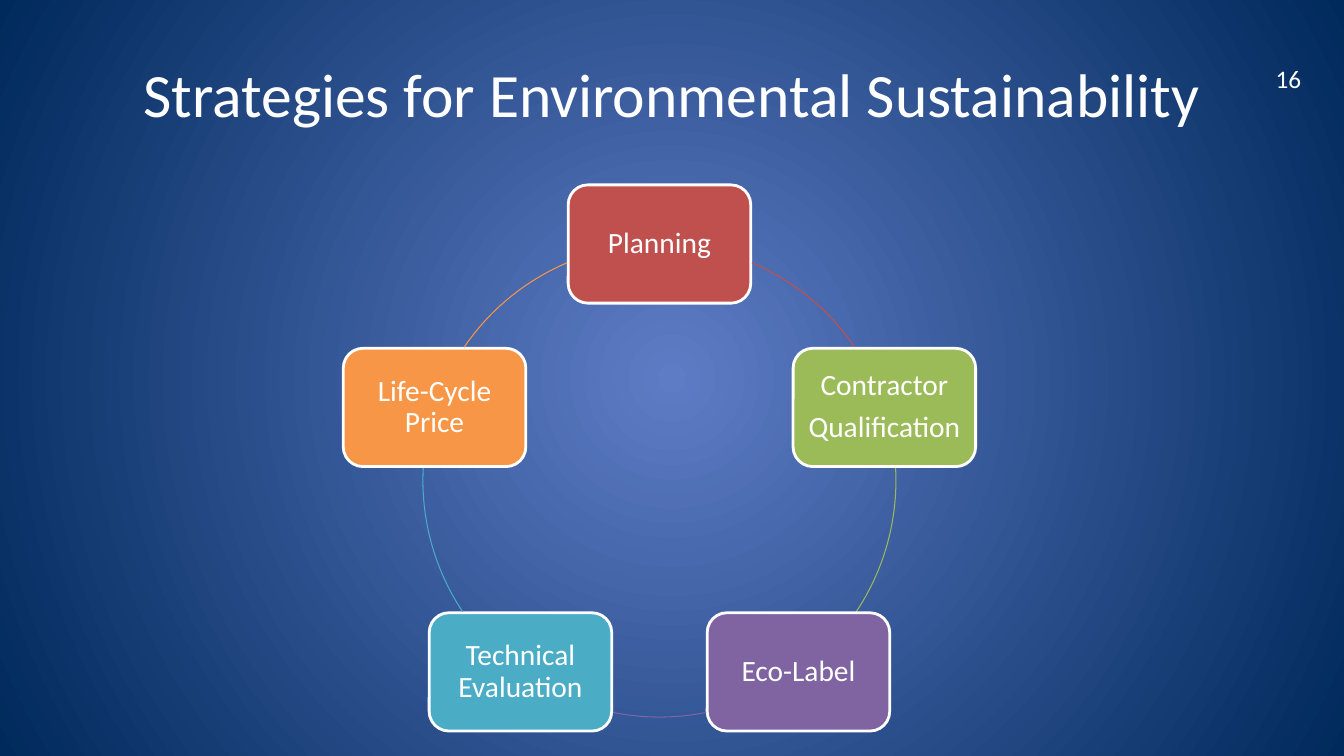
from math import cos, radians, sin

from lxml.etree import SubElement
from pptx import Presentation
from pptx.dml.color import RGBColor as RGB
from pptx.enum.shapes import MSO_SHAPE as Shape
from pptx.enum.text import MSO_ANCHOR as Anchor, PP_ALIGN as Align
from pptx.oxml.ns import qn
from pptx.util import Cm, Pt

WHITE = RGB(0xFF, 0xFF, 0xFF)
GLOW = RGB(0x5E, 0x7C, 0xC5)
NAVY = RGB(0x00, 0x29, 0x5C)
RED = RGB(0xC0, 0x50, 0x4D)
GREEN = RGB(0x9B, 0xBB, 0x59)
PURPLE = RGB(0x80, 0x64, 0xA2)
TEAL = RGB(0x4B, 0xAC, 0xC6)
ORANGE = RGB(0xF7, 0x96, 0x46)

# Ring centre and radius, card size, in cm
MID_X, MID_Y, RADIUS = 16.62, 12.11, 5.96
CARD_W, CARD_H = 4.6, 2.98

# Card text, colour, and the visible arc to the next card in degrees
STEPS = [
    ("Planning", RED, (293, 325.7)),
    ("Contractor\nQualification", GREEN, (357, 33.7)),
    ("Eco-Label", PURPLE, (78.6, 101.4)),
    ("Technical Evaluation", TEAL, (146.3, 183)),
    ("Life-Cycle Price", ORANGE, (214.3, 247)),
]


def paint_back(slide):
    """Radial gradient, light in the middle."""
    fill = slide.background.fill
    fill.gradient()
    for stop, color, pos in zip(fill.gradient_stops, (GLOW, NAVY), (0, 1)):
        stop.color.rgb = color
        stop.position = pos
    grad = slide.element.find(".//" + qn("a:gradFill"))
    grad.remove(grad.find(qn("a:lin")))
    circle = SubElement(grad, qn("a:path"), path="circle")
    SubElement(circle, qn("a:fillToRect"),
               {side: "50000" for side in "ltrb"})


def set_text(frame, text, size, align):
    frame.text = text
    frame.word_wrap = True
    for para in frame.paragraphs:
        para.alignment = align
        for run in para.runs:
            run.font.name = "Calibri"
            run.font.size = Pt(size)
            run.font.color.rgb = WHITE


def add_label(slide, text, box, size, align, anchor):
    frame = slide.shapes.add_textbox(*map(Cm, box)).text_frame
    set_text(frame, text, size, align)
    frame.vertical_anchor = anchor


def add_arc(slide, color, span):
    side = Cm(2 * RADIUS)
    arc = slide.shapes.add_shape(
        Shape.ARC, Cm(MID_X - RADIUS), Cm(MID_Y - RADIUS), side, side)
    for i, angle in enumerate(span):
        arc.adjustments[i] = angle * 0.6  # 60000 units a degree / 100000
    arc.shadow.inherit = False
    arc.fill.background()
    arc.line.color.rgb = color
    arc.line.width = Pt(0.75)


def add_card(slide, text, color, angle):
    x = MID_X + RADIUS * cos(radians(angle))
    y = MID_Y + RADIUS * sin(radians(angle))
    card = slide.shapes.add_shape(
        Shape.ROUNDED_RECTANGLE, Cm(x - CARD_W / 2), Cm(y - CARD_H / 2),
        Cm(CARD_W), Cm(CARD_H))
    card.shadow.inherit = False
    card.fill.solid()
    card.fill.fore_color.rgb = color
    card.line.color.rgb = WHITE
    card.line.width = Pt(2)
    frame = card.text_frame
    set_text(frame, text, 21, Align.CENTER)
    frame.vertical_anchor = Anchor.MIDDLE
    # The rounded corners already narrow the text area
    frame.margin_left = frame.margin_right = Cm(0.15)
    for para in frame.paragraphs:
        para.line_spacing = 0.9
        para.space_after = Pt(7.35)


def main():
    deck = Presentation()
    deck.slide_width, deck.slide_height = Cm(33.87), Cm(19.05)
    slide = deck.slides.add_slide(deck.slide_layouts[6])
    paint_back(slide)

    # Page number and title
    add_label(slide, "16", (31.9, 1.47, 1.98, 1.02), 18,
              Align.LEFT, Anchor.TOP)
    add_label(slide, "Strategies for Environmental Sustainability",
              (1.7, 0.76, 30.48, 3.18), 44, Align.CENTER, Anchor.MIDDLE)

    # Cycle: cards at equal angles, clockwise from the top
    for i, (text, color, span) in enumerate(STEPS):
        add_card(slide, text, color, 360 / len(STEPS) * i - 90)
        add_arc(slide, color, span)

    deck.save("out.pptx")


if __name__ == "__main__":
    main()
